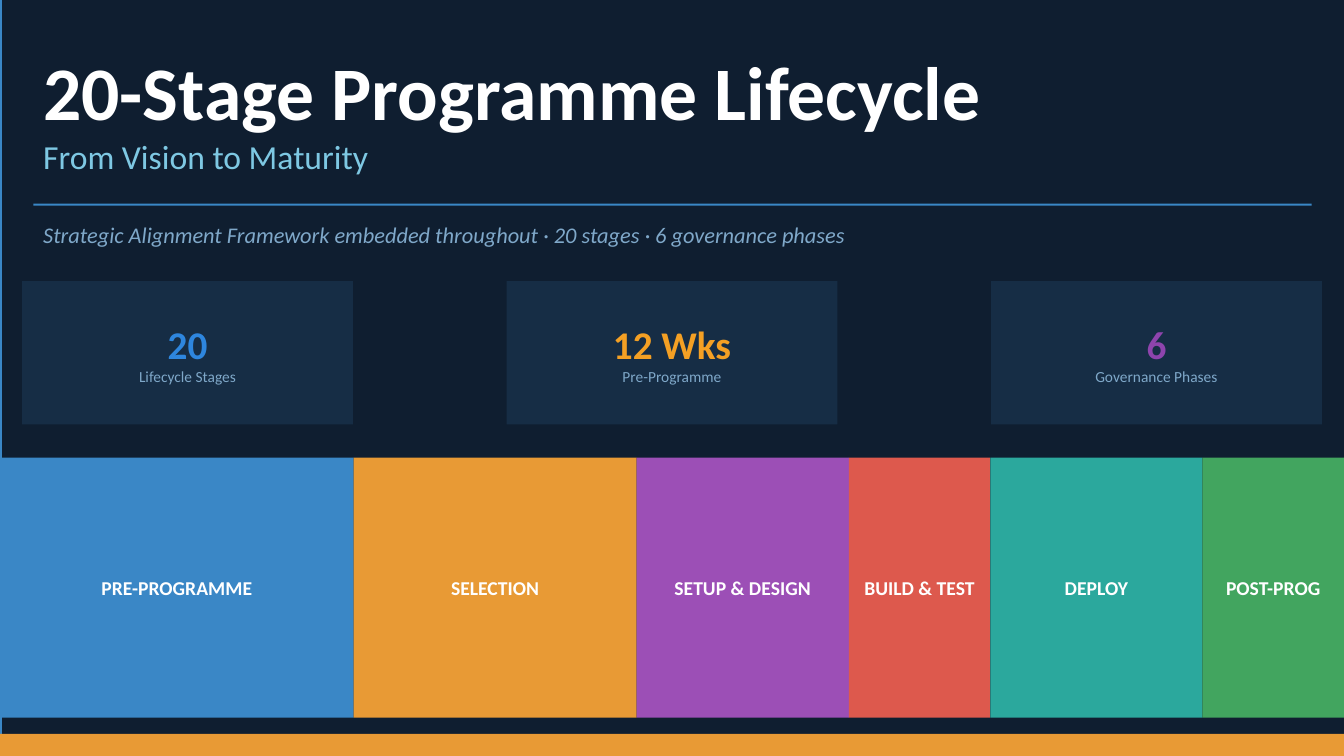
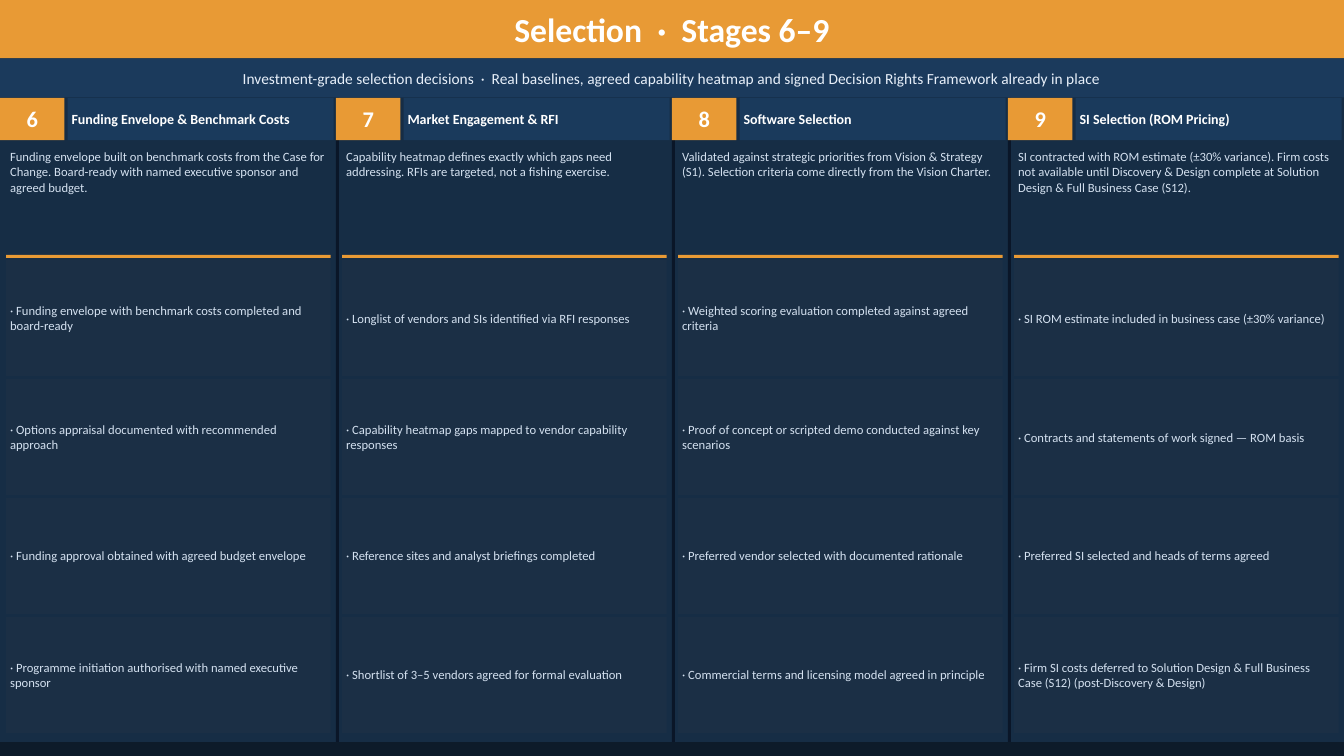
from pptx import Presentation
from pptx.dml.color import RGBColor
from pptx.enum.shapes import MSO_SHAPE
from pptx.enum.text import MSO_ANCHOR, PP_ALIGN
from pptx.util import Inches, Pt

RECTANGLE = MSO_SHAPE.RECTANGLE
LEFT, CENTER = PP_ALIGN.LEFT, PP_ALIGN.CENTER
TOP, MIDDLE = MSO_ANCHOR.TOP, MSO_ANCHOR.MIDDLE

FONT = "Calibri"
SLIDE_WIDTH, SLIDE_HEIGHT = 13.33, 7.5
WHITE = "FFFFFF"
BLUE = "3A87C6"
ORANGE = "E89A35"
PANEL = "162D45"
MUTED = "7FA8C9"
PALE = "D4E1F0"


def add_box(page, left, top, width, height, fill=None):
    """Add a plain rectangle, or a text box when there is no fill."""
    place = [Inches(value) for value in (left, top, width, height)]
    if fill is None:
        return page.shapes.add_textbox(*place)
    box = page.shapes.add_shape(RECTANGLE, *place)
    box.shadow.inherit = False
    box.fill.solid()
    box.fill.fore_color.rgb = RGBColor.from_string(fill)
    box.line.fill.background()
    return box


def write(box, text, size, color=WHITE, bold=False, italic=False,
          align=LEFT, anchor=MIDDLE, inset=None):
    """Write one paragraph below any text already in the box."""
    frame = box.text_frame
    frame.word_wrap = True
    frame.vertical_anchor = anchor
    if inset is not None:
        frame.margin_left = frame.margin_right = Inches(inset)
        frame.margin_top = frame.margin_bottom = Inches(inset)
    para = frame.add_paragraph() if frame.text else frame.paragraphs[0]
    para.alignment = align
    span = para.add_run()
    span.text = text
    span.font.name = FONT
    span.font.size = Pt(size)
    span.font.bold = bold
    span.font.italic = italic
    span.font.color.rgb = RGBColor.from_string(color)


deck = Presentation()
deck.slide_width = Inches(SLIDE_WIDTH)
deck.slide_height = Inches(SLIDE_HEIGHT)
pages = []
for background in ("0F1E30", "0D2137"):
    page = deck.slides.add_slide(deck.slide_layouts[6])
    page.background.fill.solid()
    page.background.fill.fore_color.rgb = RGBColor.from_string(background)
    pages.append(page)
cover, selection = pages

# Cover: title, key figures and the phase band
MARGIN, TEXT_WIDTH = 0.33, 12.68
add_box(cover, 0, 0, 0.02, SLIDE_HEIGHT, BLUE)
title = add_box(cover, MARGIN, 0.33, TEXT_WIDTH, 1.53)
write(title, "20-Stage Programme Lifecycle", 54, bold=True)
write(title, "From Vision to Maturity", 24, "7EC8E3")
add_box(cover, MARGIN, 2.02, TEXT_WIDTH, 0.02, BLUE)
tagline = add_box(cover, MARGIN, 2.13, TEXT_WIDTH, 0.39)
write(tagline, "Strategic Alignment Framework embedded throughout · 20 stages · 6 governance phases",
      16, MUTED, italic=True)

figures = [
    ("20", "Lifecycle Stages", "2E86DE"),
    ("12 Wks", "Pre-Programme", "F4A024"),
    ("6", "Governance Phases", "8E44AD"),
]
CARD_LEFT, CARD_WIDTH = 0.22, 3.28
card_step = (SLIDE_WIDTH - 2 * CARD_LEFT - CARD_WIDTH) / (len(figures) - 1)
for index, (value, label, color) in enumerate(figures):
    card = add_box(cover, CARD_LEFT + index * card_step, 2.79, CARD_WIDTH, 1.42, PANEL)
    write(card, value, 28, color, bold=True, align=CENTER)
    write(card, label, 11, MUTED, align=CENTER)

# Each phase is as wide as its share of the total weight
phases = [
    ("PRE-PROGRAMME", 5, BLUE),
    ("SELECTION", 4, ORANGE),
    ("SETUP & DESIGN", 3, "9C4FB6"),
    ("BUILD & TEST", 2, "DD594D"),
    ("DEPLOY", 3, "2BA89D"),
    ("POST-PROG", 2, "42A55F"),
]
unit = SLIDE_WIDTH / sum(weight for _, weight, _ in phases)
phase_left = 0
for name, weight, color in phases:
    phase = add_box(cover, phase_left, 4.54, weight * unit, 2.58, color)
    write(phase, name, 14, bold=True, align=CENTER)
    phase_left += weight * unit
add_box(cover, 0, 7.28, SLIDE_WIDTH, 0.22, ORANGE)

# Selection: one column per stage
INSET = 0.04
header = add_box(selection, 0, 0, SLIDE_WIDTH, 0.58, ORANGE)
write(header, "Selection  ·  Stages 6–9", 24, bold=True, align=CENTER, inset=INSET)
summary = add_box(selection, 0, 0.58, SLIDE_WIDTH, 0.39, "1B3A5C")
write(summary, "Investment-grade selection decisions  ·  Real baselines, agreed capability heatmap "
      "and signed Decision Rights Framework already in place",
      11, "E8F0FA", align=CENTER, inset=INSET)
add_box(selection, 0, 7.36, SLIDE_WIDTH, 0.14, "0D1B2A")

stages = [
    ("Funding Envelope & Benchmark Costs",
     "Funding envelope built on benchmark costs from the Case for Change. "
     "Board-ready with named executive sponsor and agreed budget.",
     ["Funding envelope with benchmark costs completed and board-ready",
      "Options appraisal documented with recommended approach",
      "Funding approval obtained with agreed budget envelope",
      "Programme initiation authorised with named executive sponsor"]),
    ("Market Engagement & RFI",
     "Capability heatmap defines exactly which gaps need addressing. "
     "RFIs are targeted, not a fishing exercise.",
     ["Longlist of vendors and SIs identified via RFI responses",
      "Capability heatmap gaps mapped to vendor capability responses",
      "Reference sites and analyst briefings completed",
      "Shortlist of 3–5 vendors agreed for formal evaluation"]),
    ("Software Selection",
     "Validated against strategic priorities from Vision & Strategy (S1). "
     "Selection criteria come directly from the Vision Charter.",
     ["Weighted scoring evaluation completed against agreed criteria",
      "Proof of concept or scripted demo conducted against key scenarios",
      "Preferred vendor selected with documented rationale",
      "Commercial terms and licensing model agreed in principle"]),
    ("SI Selection (ROM Pricing)",
     "SI contracted with ROM estimate (±30% variance). Firm costs not available until "
     "Discovery & Design complete at Solution Design & Full Business Case (S12).",
     ["SI ROM estimate included in business case (±30% variance)",
      "Contracts and statements of work signed — ROM basis",
      "Preferred SI selected and heads of terms agreed",
      "Firm SI costs deferred to Solution Design & Full Business Case (S12) "
      "(post-Discovery & Design)"]),
]
FIRST_STAGE = 6
COLUMN_TOP, COLUMN_HEIGHT, HEADING_HEIGHT = 0.97, 6.39, 0.42
PADDING, CONTENT_WIDTH = 0.06, 3.22
OUTCOME_TOP, OUTCOME_HEIGHT, OUTCOME_STEP = 2.58, 1.15, 1.18
column_width = SLIDE_WIDTH / len(stages)
for index, (name, description, outcomes) in enumerate(stages):
    left = index * column_width
    content_left = left + PADDING
    add_box(selection, left, COLUMN_TOP, column_width, COLUMN_HEIGHT, PANEL)
    if index:
        add_box(selection, left, COLUMN_TOP, 0.03, COLUMN_HEIGHT, "0A1628")
    badge = add_box(selection, left, COLUMN_TOP, 0.64, HEADING_HEIGHT, ORANGE)
    write(badge, str(FIRST_STAGE + index), 16, bold=True, align=CENTER, inset=INSET)
    heading = add_box(selection, left + 0.67, COLUMN_TOP, 2.64, HEADING_HEIGHT, "1A3A5C")
    write(heading, name, 10, bold=True, inset=INSET)
    intro = add_box(selection, content_left, 1.44, CONTENT_WIDTH, 1.06)
    write(intro, description, 9, PALE, anchor=TOP, inset=INSET)
    add_box(selection, content_left, 2.53, CONTENT_WIDTH, 0.03, ORANGE)
    for row, outcome in enumerate(outcomes):
        cell = add_box(selection, content_left, OUTCOME_TOP + row * OUTCOME_STEP,
                       CONTENT_WIDTH, OUTCOME_HEIGHT, "1B2F45")
        write(cell, f"· {outcome}", 9, PALE, inset=INSET)

deck.save("out.pptx")
